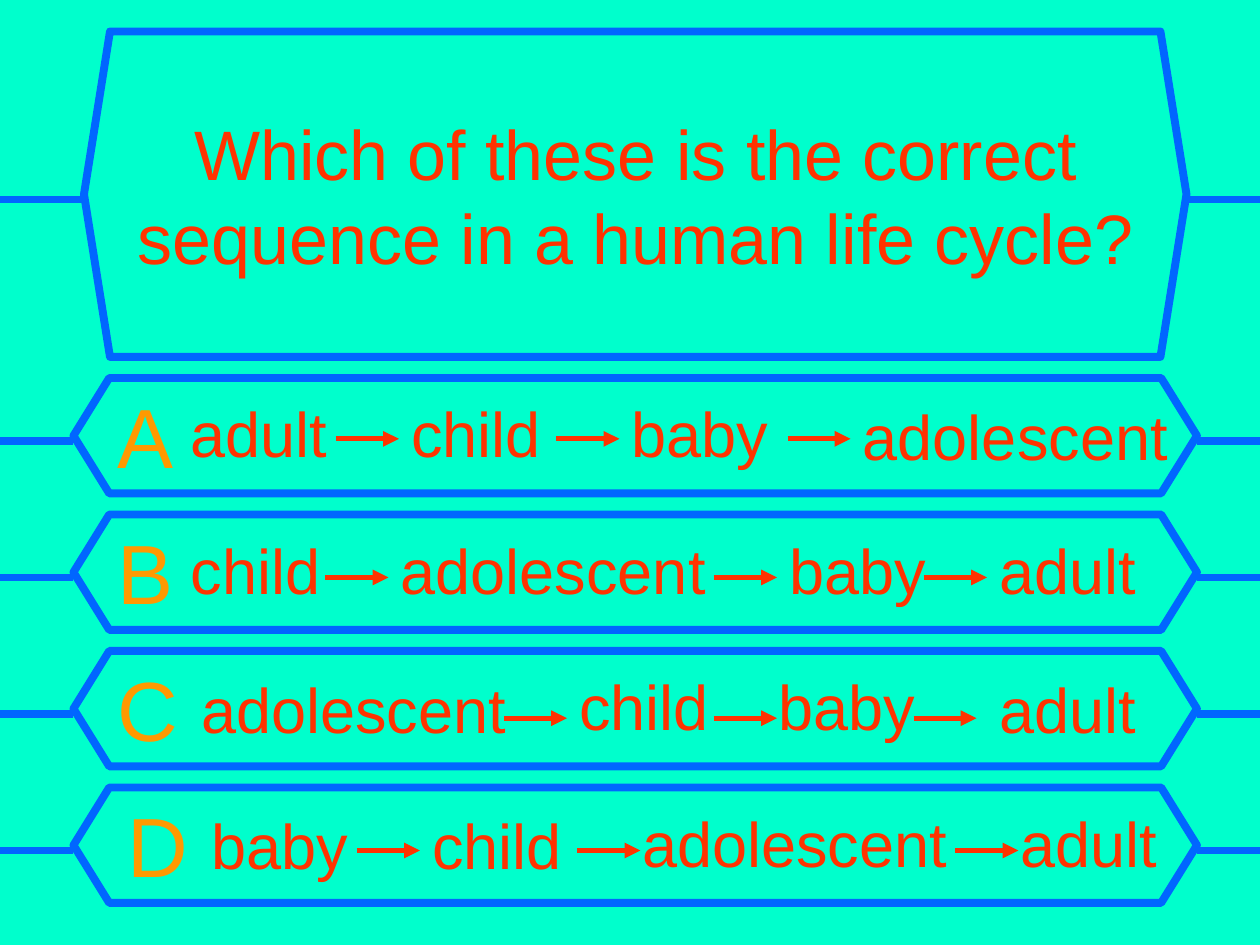
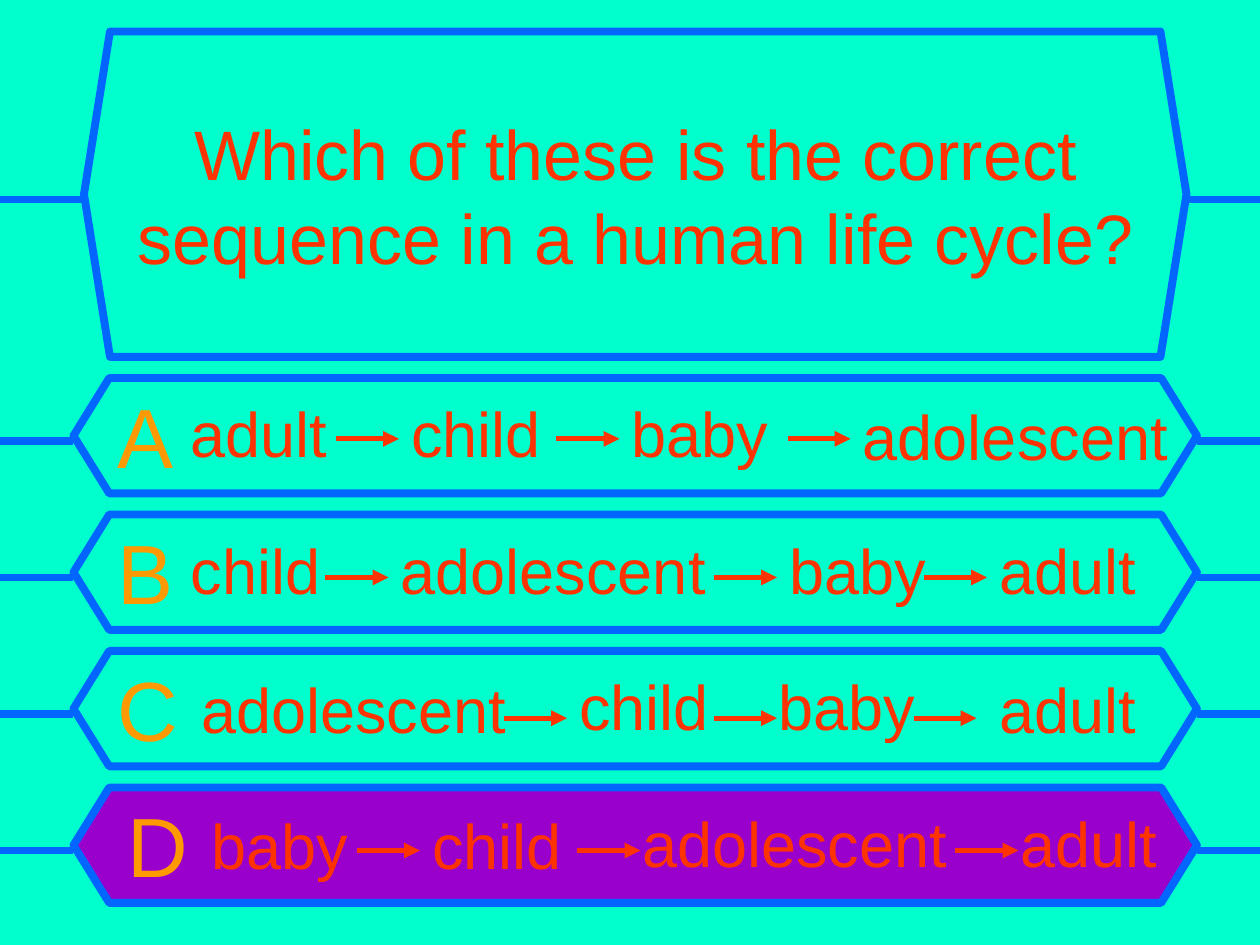
from lxml.etree import SubElement
from pptx import Presentation
from pptx.dml.color import RGBColor
from pptx.enum.shapes import MSO_CONNECTOR, MSO_SHAPE
from pptx.enum.text import MSO_ANCHOR, MSO_AUTO_SIZE, PP_ALIGN
from pptx.oxml.ns import qn
from pptx.util import Emu, Pt

AQUA = RGBColor(0x00, 0xFF, 0xCC)
BLUE = RGBColor(0x00, 0x66, 0xFF)
RED = RGBColor(0xFF, 0x33, 0x00)
GOLD = RGBColor(0xFF, 0x99, 0x00)
PLUM = RGBColor(0x99, 0x00, 0xCC)

PX = 7620
WIDE, HIGH = 1200, 900
TOP, STEP = 360, 130
LEFT, RIGHT = 70, 1140
ARROW = 60

ASK = "Which of these is the correct sequence in a human life cycle?"
HEAD = {"size": Pt(40), "name": "Arial"}
WORD = {"size": Pt(36), "name": "Arial"}
MARK = {"size": Pt(48), "name": "Arial"}
GROW = {"word_wrap": True, "auto_size": MSO_AUTO_SIZE.SHAPE_TO_FIT_TEXT}
FIXED = {"word_wrap": True, "auto_size": MSO_AUTO_SIZE.NONE,
         "vertical_anchor": MSO_ANCHOR.MIDDLE}

# letter, its x, words as (text, x, y in row, width), arrow x list, arrow y in row
ROWS = [
    ("A", 100, [("adult", 170, 10, 170), ("child", 380, 10, 170),
                ("baby", 590, 10, 170), ("adolescent", 810, 13, 330)],
     [320, 530, 750], 58),
    ("B", 100, [("child", 170, 10, 170), ("adolescent", 370, 10, 350),
                ("baby", 740, 10, 170), ("adult", 940, 10, 170)],
     [310, 680, 880], 60),
    ("C", 100, [("adolescent", 180, 13, 360), ("child", 540, 10, 170),
                ("baby", 730, 10, 170), ("adult", 940, 13, 170)],
     [480, 680, 870], 64),
    ("D", 110, [("baby", 190, 12, 170), ("child", 400, 12, 170),
                ("adolescent", 600, 10, 360), ("adult", 960, 10, 170)],
     [340, 550, 910], 60),
]


def emu(*sizes):
    """Turn px lengths into EMU."""
    return [Emu(size * PX) for size in sizes]


def style(item, form):
    """Set each attribute named in a dict of format values."""
    for name, value in form.items():
        setattr(item, name, value)


def write(frame, text, form, color):
    """Put one formatted run in a text frame and return its paragraph."""
    para = frame.paragraphs[0]
    run = para.add_run()
    run.text = text
    style(run.font, form)
    run.font.color.rgb = color
    return para


def add_hex(slide, box, bend, fill):
    """Draw a hexagon frame with a blue outline."""
    shape = slide.shapes.add_shape(MSO_SHAPE.HEXAGON, *emu(*box))
    shape.adjustments[0] = bend
    shape.shadow.inherit = False
    shape.fill.solid()
    shape.fill.fore_color.rgb = fill
    shape.line.color.rgb = BLUE
    shape.line.width = Pt(4.5)


def add_line(shapes, start, end, y, color, width):
    """Draw a level line and return its outline element."""
    line = shapes.add_connector(MSO_CONNECTOR.STRAIGHT, *emu(start, y, end, y))
    line.line.color.rgb = color
    line.line.width = Pt(width)
    props = line._element.spPr
    SubElement(props, qn("a:effectLst"))
    return props.find(qn("a:ln"))


def add_arrow(shapes, x, y):
    """Draw a short red arrow to the right."""
    edge = add_line(shapes, x, x + ARROW, y, RED, 3)
    SubElement(edge, qn("a:tailEnd"), type="triangle")


def add_wires(slide, left, right, y):
    """Join a frame to both slide edges."""
    add_line(slide.shapes, left, 0, y, BLUE, 4.5)
    add_line(slide.shapes, WIDE, right, y, BLUE, 4.5)


def add_text(shapes, text, box, form, color):
    """Add a text box with half a line of space before."""
    frame = shapes.add_textbox(*emu(*box)).text_frame
    style(frame, GROW)
    para = write(frame, text, form, color)
    space = SubElement(para._p.get_or_add_pPr(), qn("a:spcBef"))
    SubElement(space, qn("a:spcPct"), val="50000")


def add_title(slide):
    """Place the question above its frame."""
    title = slide.shapes.title
    box = emu(100, 50, 1010, 270)
    style(title, dict(zip(("left", "top", "width", "height"), box)))
    style(title.text_frame, FIXED)
    write(title.text_frame, ASK, HEAD, RED).alignment = PP_ALIGN.CENTER
    slide.shapes._spTree.append(title._element)


def add_row(slide, top, mark, left, words, arrows, drop):
    """Group one answer's letter, words and arrows."""
    shapes = slide.shapes.add_group_shape().shapes
    for text, x, y, width in words:
        add_text(shapes, text, (x, top + y, width, 84), WORD, RED)
    for x in arrows:
        add_arrow(shapes, x, top + drop)
    add_text(shapes, mark, (left, top, 100, 108), MARK, GOLD)


def add_quiz(deck, answer=None):
    """Build a question slide, with the answer lit if given."""
    slide = deck.slides.add_slide(deck.slide_layouts[5])
    tops = [TOP + STEP * i for i in range(len(ROWS))]
    for top, row in zip(tops, ROWS):
        fill = PLUM if row[0] == answer else AQUA
        add_hex(slide, (LEFT, top, RIGHT - LEFT, 110), 0.31, fill)
    add_hex(slide, (80, 30, 1050, 310), 0.08, AQUA)
    add_title(slide)
    add_wires(slide, 80, 1130, 190)
    for top, row in zip(tops, ROWS):
        add_wires(slide, LEFT, RIGHT, top + 60)
        add_row(slide, top, *row)


def main():
    """Build the question and answer slides."""
    deck = Presentation()
    deck.slide_width, deck.slide_height = emu(WIDE, HIGH)
    back = deck.slide_master.background.fill
    back.solid()
    back.fore_color.rgb = AQUA
    add_quiz(deck)
    add_quiz(deck, "D")
    deck.save("out.pptx")


if __name__ == "__main__":
    main()
